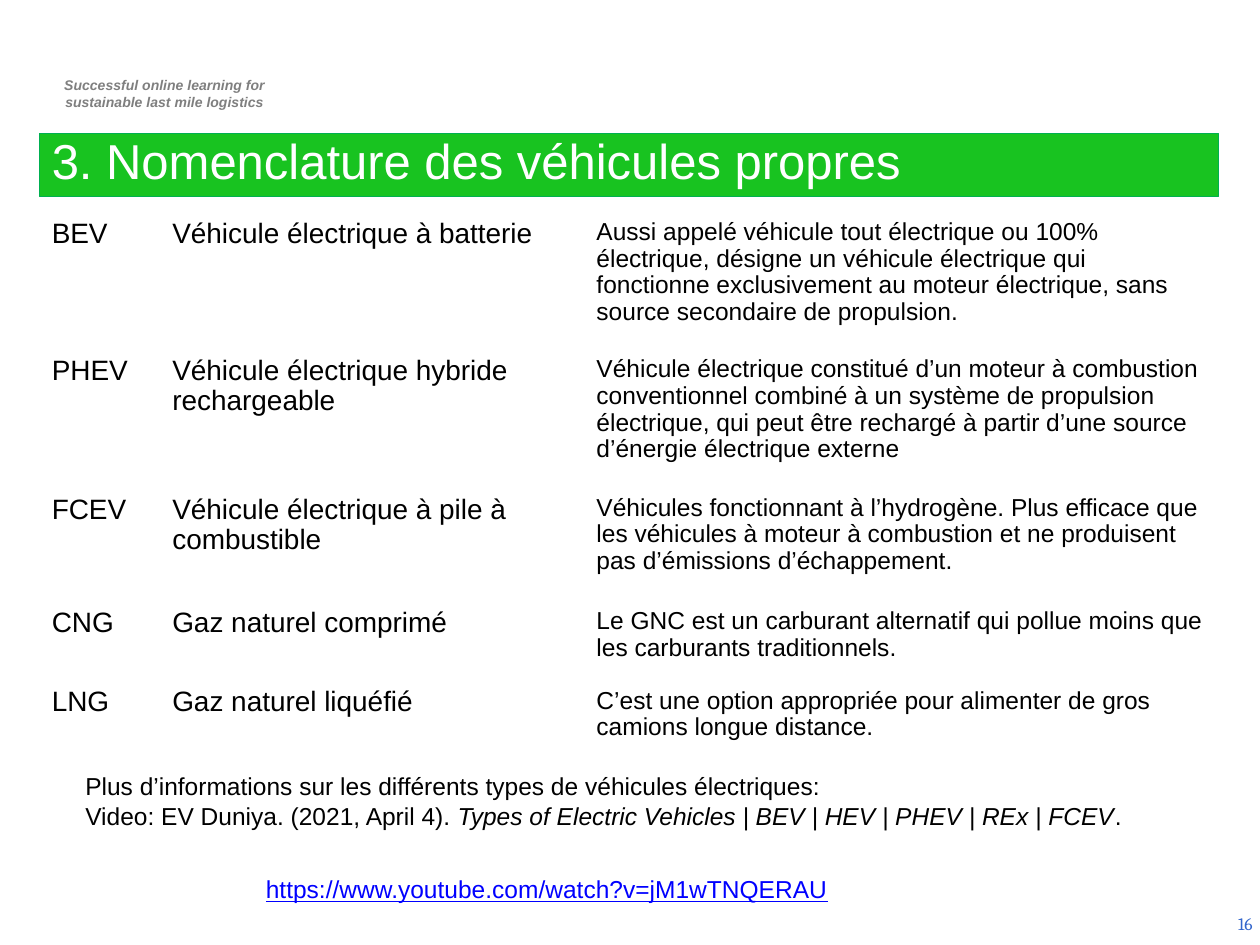
from dataclasses import dataclass

from pptx import Presentation
from pptx.dml.color import RGBColor
from pptx.enum.text import MSO_ANCHOR, MSO_AUTO_SIZE, PP_ALIGN
from pptx.util import Cm, Pt


@dataclass(frozen=True)
class Theme:
    body_font: str = "Arial"
    number_font: str = "Cambria"
    green: str = "18C320"
    green_line: str = "00B050"
    white: str = "FFFFFF"
    black: str = "000000"
    grey: str = "7F7F7F"
    blue: str = "3366CC"
    link: str = "0000FF"
    title_size: int = 28
    term_size: int = 16
    text_size: int = 14
    number_size: int = 10
    header_size: int = 8


theme = Theme()


def style(paragraph, size, color, name=theme.body_font):
    font = paragraph.font
    font.name, font.size = name, Pt(size)
    font.color.rgb = RGBColor.from_string(color)
    return font


def add_text(slide, box, lines, size, color, align=PP_ALIGN.LEFT, name=theme.body_font):
    shape = slide.shapes.add_textbox(*[Cm(value) for value in box])
    frame = shape.text_frame
    frame.word_wrap = True
    frame.text = "\n".join(lines)
    for paragraph in frame.paragraphs:
        paragraph.alignment = align
        style(paragraph, size, color, name)
    return frame


presentation = Presentation()
presentation.slide_width, presentation.slide_height = Cm(25.4), Cm(19.05)
slide = presentation.slides.add_slide(presentation.slide_layouts[5])

# Project header
header = add_text(
    slide, (0.74, 1.42, 5.16, 0.94),
    ["Successful online learning for", "sustainable last mile logistics"],
    theme.header_size, theme.grey, PP_ALIGN.CENTER)
for paragraph in header.paragraphs:
    paragraph.font.bold = paragraph.font.italic = True

# Slide number
number = add_text(slide, (19.58, 18.11, 5.92, 1.02), ["16"], theme.number_size,
                  theme.blue, PP_ALIGN.RIGHT, theme.number_font)
number.vertical_anchor = MSO_ANCHOR.MIDDLE

# Title bar
title = slide.shapes.title
title.left, title.top, title.width, title.height = Cm(0.79), Cm(2.69), Cm(23.77), Cm(1.27)
title.fill.solid()
title.fill.fore_color.rgb = RGBColor.from_string(theme.green)
title.line.color.rgb = RGBColor.from_string(theme.green_line)
title.line.width = Pt(0.75)
frame = title.text_frame
frame.text = "3. Nomenclature des véhicules propres"
frame.auto_size = MSO_AUTO_SIZE.NONE
frame.vertical_anchor = MSO_ANCHOR.BOTTOM
paragraph = frame.paragraphs[0]
paragraph.alignment = PP_ALIGN.LEFT
paragraph.line_spacing = 0.9
style(paragraph, theme.title_size, theme.white)

# Vehicle table
vehicles = [
    ("BEV", "Véhicule électrique à batterie",
     "Aussi appelé véhicule tout électrique ou 100% électrique, désigne un véhicule "
     "électrique qui fonctionne exclusivement au moteur électrique, sans source "
     "secondaire de propulsion."),
    ("PHEV", "Véhicule électrique hybride rechargeable",
     "Véhicule électrique constitué d’un moteur à combustion conventionnel combiné à un "
     "système de propulsion électrique, qui peut être rechargé à partir d’une source "
     "d’énergie électrique externe"),
    ("FCEV", "Véhicule électrique à pile à combustible",
     "Véhicules fonctionnant à l’hydrogène. Plus efficace que les véhicules à moteur à "
     "combustion et ne produisent pas d’émissions d’échappement."),
    ("CNG", "Gaz naturel comprimé",
     "Le GNC est un carburant alternatif qui pollue moins que les carburants traditionnels."),
    ("LNG", "Gaz naturel liquéfié",
     "C’est une option appropriée pour alimenter de gros camions longue distance."),
]
column_widths = [2.43, 8.55, 12.79]
row_heights = [2.77, 2.79, 2.28, 1.61, 1.61]
table = slide.shapes.add_table(
    len(vehicles), len(column_widths), Cm(0.79), Cm(4.29),
    Cm(sum(column_widths)), Cm(sum(row_heights))).table
table.first_row = table.horz_banding = False
for column, width in zip(table.columns, column_widths):
    column.width = Cm(width)
for row, height, texts in zip(table.rows, row_heights, vehicles):
    row.height = Cm(height)
    sizes = (theme.term_size, theme.term_size, theme.text_size)
    for cell, text, size in zip(row.cells, texts, sizes):
        cell.fill.background()
        cell.text = text
        paragraph = cell.text_frame.paragraphs[0]
        paragraph.line_spacing = 0.97
        style(paragraph, size, theme.black)

# Further reading
reading = add_text(
    slide, (1.47, 15.42, 21.79, 1.45),
    ["Plus d’informations sur les différents types de véhicules électriques:",
     "Video: EV Duniya. (2021, April 4). "],
    theme.text_size, theme.black, PP_ALIGN.JUSTIFY)
citation = reading.paragraphs[1]
video_title = citation.add_run()
video_title.text = "Types of Electric Vehicles | BEV | HEV | PHEV | REx | FCEV"
video_title.font.italic = True
citation.add_run().text = "."

# Video address
address = add_text(slide, (5.11, 17.5, 12.75, 0.86),
                   ["https://www.youtube.com/watch?v=jM1wTNQERAU"],
                   theme.text_size, theme.link)
address.paragraphs[0].font.underline = True

presentation.save("out.pptx")
